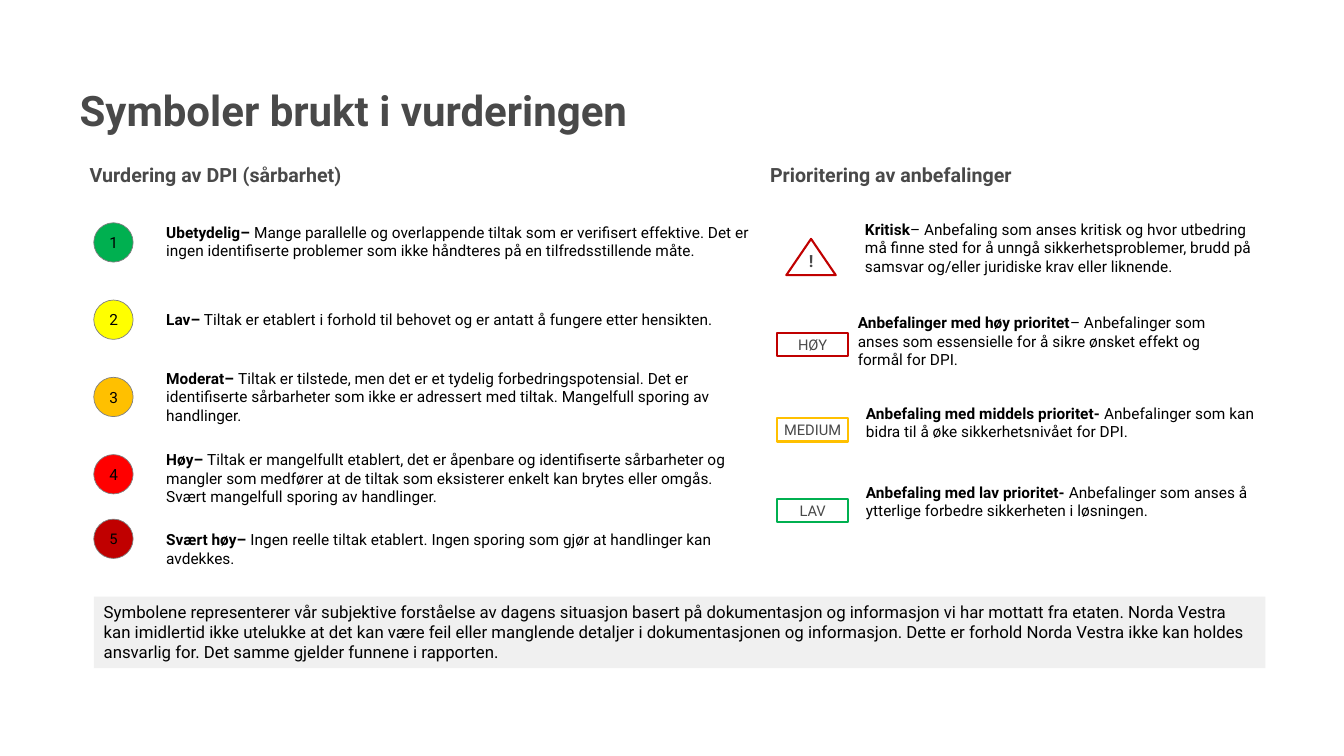
from typing import NamedTuple

from pptx import Presentation
from pptx.dml.color import RGBColor
from pptx.enum.shapes import MSO_SHAPE
from pptx.enum.text import MSO_ANCHOR, PP_ALIGN
from pptx.util import Inches, Pt

BLACK = RGBColor(0x00, 0x00, 0x00)
CHARCOAL = RGBColor(0x49, 0x49, 0x49)
GREY = RGBColor(0x80, 0x80, 0x80)
PALE_GREY = RGBColor(0xF0, 0xF0, 0xF0)
GREEN = RGBColor(0x00, 0xB0, 0x50)
YELLOW = RGBColor(0xFF, 0xFF, 0x00)
AMBER = RGBColor(0xFF, 0xC0, 0x00)
RED = RGBColor(0xFF, 0x00, 0x00)
DARK_RED = RGBColor(0xC0, 0x00, 0x00)

FONT = "Roboto"
MARGINS = (0.1, 0.05, 0.1, 0.05)  # inches: left, top, right, bottom

presentation = Presentation()
presentation.slide_width = Inches(13.33)
presentation.slide_height = Inches(7.5)
slide = presentation.slides.add_slide(presentation.slide_layouts[6])


class Box(NamedTuple):
    """Left, top, width and height as percentages of the slide's size."""
    left: float
    top: float
    width: float
    height: float

    def emu(self) -> list[int]:
        sides = (presentation.slide_width, presentation.slide_height) * 2
        return [round(share * side / 100) for share, side in zip(self, sides)]


class Level(NamedTuple):
    color: RGBColor
    circle_top: float
    number_size: float
    text_top: float
    text_height: float
    term: str
    meaning: str


class Priority(NamedTuple):
    sign: str
    color: RGBColor
    sign_top: float
    text_left: float
    text_top: float
    text_height: float
    term: str
    meaning: str


LEVELS = [
    Level(GREEN, 29.47, 11, 28.8, 6.27, "Ubetydelig– ",
          "Mange parallelle og overlappende tiltak som er verifisert effektive. "
          "Det er ingen identifiserte problemer som ikke håndteres på en "
          "tilfredsstillende måte."),
    Level(YELLOW, 39.69, 11, 40.4, 3.87, "Lav–",
          " Tiltak er etablert i forhold til behovet og er antatt å fungere "
          "etter hensikten."),
    Level(AMBER, 49.91, 11, 48.13, 8.8, "Moderat– ",
          "Tiltak er tilstede, men det er et tydelig forbedringspotensial. Det er "
          "identifiserte sårbarheter som ikke er adressert med tiltak. "
          "Mangelfull sporing av handlinger."),
    Level(RED, 60.13, 11, 58.93, 8.8, "Høy– ",
          "Tiltak er mangelfullt etablert, det er åpenbare og identifiserte "
          "sårbarheter og mangler som medfører at de tiltak som eksisterer enkelt "
          "kan brytes eller omgås. Svært mangelfull sporing av handlinger."),
    Level(DARK_RED, 68.67, 10.5, 69.47, 6.27, "Svært høy–",
          " Ingen reelle tiltak etablert. Ingen sporing som gjør at handlinger "
          "kan avdekkes."),
]

PRIORITIES = [
    Priority("!", DARK_RED, 31.6, 63.62, 28.4, 8.8, "Kritisk",
             "– Anbefaling som anses kritisk og hvor utbedring må finne sted for å "
             "unngå sikkerhetsproblemer, brudd på samsvar og/eller juridiske krav "
             "eller liknende."),
    Priority("HØY", DARK_RED, 44, 63.09, 40.8, 8.8,
             "Anbefalinger med høy prioritet",
             "– Anbefalinger som anses som essensielle for å sikre ønsket effekt "
             "og formål for DPI."),
    Priority("MEDIUM", AMBER, 55.33, 63.69, 52.8, 6.27,
             "Anbefaling med middels prioritet- ",
             "Anbefalinger som kan bidra til å øke sikkerhetsnivået for DPI."),
    Priority("LAV", GREEN, 66, 63.69, 63.2, 6.27,
             "Anbefaling med lav prioritet- ",
             "Anbefalinger som anses å ytterlige forbedre sikkerheten i løsningen."),
]

DISCLAIMER = (
    "Symbolene representerer vår subjektive forståelse av dagens situasjon basert på "
    "dokumentasjon og informasjon vi har mottatt fra etaten. Norda Vestra kan "
    "imidlertid ikke utelukke at det kan være feil eller manglende detaljer i "
    "dokumentasjonen og informasjon. Dette er forhold Norda Vestra ikke kan holdes "
    "ansvarlig for. Det samme gjelder funnene i rapporten."
)


def write(holder, text: str, size: float, color: RGBColor = BLACK,
          bold: bool = False, align: PP_ALIGN = PP_ALIGN.LEFT,
          anchor: MSO_ANCHOR = MSO_ANCHOR.TOP,
          margins: tuple[float, float, float, float] = MARGINS):
    """Set the first paragraph of a shape or text box and return it."""
    frame = holder.text_frame
    frame.word_wrap = True
    frame.vertical_anchor = anchor
    (frame.margin_left, frame.margin_top,
     frame.margin_right, frame.margin_bottom) = map(Inches, margins)
    paragraph = frame.paragraphs[0]
    paragraph.alignment = align
    paragraph.add_run().text = text
    paragraph.font.name = FONT
    paragraph.font.size = Pt(size)
    paragraph.font.color.rgb = color
    paragraph.font.bold = bold
    return paragraph


def add_text(box: Box, text: str, size: float, **style):
    return write(slide.shapes.add_textbox(*box.emu()), text, size, **style)


def add_definition(box: Box, term: str, meaning: str) -> None:
    paragraph = add_text(box, term, 11)
    paragraph.runs[0].font.bold = True
    paragraph.add_run().text = meaning


def add_figure(kind: MSO_SHAPE, box: Box, fill: RGBColor | None = None,
               outline: RGBColor | None = None, weight: float = 1.5):
    figure = slide.shapes.add_shape(kind, *box.emu())
    figure.shadow.inherit = False
    if fill is None:
        figure.fill.background()
    else:
        figure.fill.solid()
        figure.fill.fore_color.rgb = fill
    if outline is None:
        figure.line.fill.background()
    else:
        figure.line.color.rgb = outline
        figure.line.width = Pt(weight)
    return figure


def add_level(number: int, level: Level) -> None:
    circle = add_figure(MSO_SHAPE.OVAL, Box(6.98, level.circle_top, 2.93, 5.2),
                        level.color, GREY, 0.5)
    write(circle, str(number), level.number_size,
          align=PP_ALIGN.CENTER, anchor=MSO_ANCHOR.MIDDLE)
    add_definition(Box(11.63, level.text_top, 44.94, level.text_height),
                   level.term, level.meaning)


def add_priority(priority: Priority) -> None:
    if priority.sign == "!":
        warning = add_figure(MSO_SHAPE.ISOSCELES_TRIANGLE,
                             Box(58.51, priority.sign_top, 3.68, 4.8),
                             outline=priority.color)
        write(warning, priority.sign, 12, CHARCOAL, True, PP_ALIGN.CENTER,
              MSO_ANCHOR.BOTTOM, (0.1, 0.14, 0.1, 0.05))
    else:
        tag = add_figure(MSO_SHAPE.RECTANGLE,
                         Box(57.84, priority.sign_top, 5.25, 3.07),
                         outline=priority.color)
        write(tag, priority.sign, 10.5, CHARCOAL, False, PP_ALIGN.CENTER,
              MSO_ANCHOR.MIDDLE, (0, 0.05, 0, 0.05))
    add_definition(
        Box(priority.text_left, priority.text_top, 30.46, priority.text_height),
        priority.term, priority.meaning)


add_text(Box(5.93, 10.8, 88.22, 8), "Symboler brukt i vurderingen", 30,
         color=CHARCOAL, bold=True, margins=(0, 0.03, 0, 0))
for heading, left, width in (("Vurdering av DPI (sårbarhet)", 5.93, 35.03),
                             ("Prioritering av anbefalinger", 56.56, 31.88)):
    add_text(Box(left, 20.93, width, 4.4), heading, 14,
             color=CHARCOAL, bold=True, anchor=MSO_ANCHOR.MIDDLE)
for number, level in enumerate(LEVELS, start=1):
    add_level(number, level)
for priority in PRIORITIES:
    add_priority(priority)
write(add_figure(MSO_SHAPE.RECTANGLE, Box(6.98, 78.93, 87.17, 9.47), PALE_GREY),
      DISCLAIMER, 12)

presentation.save("out.pptx")
